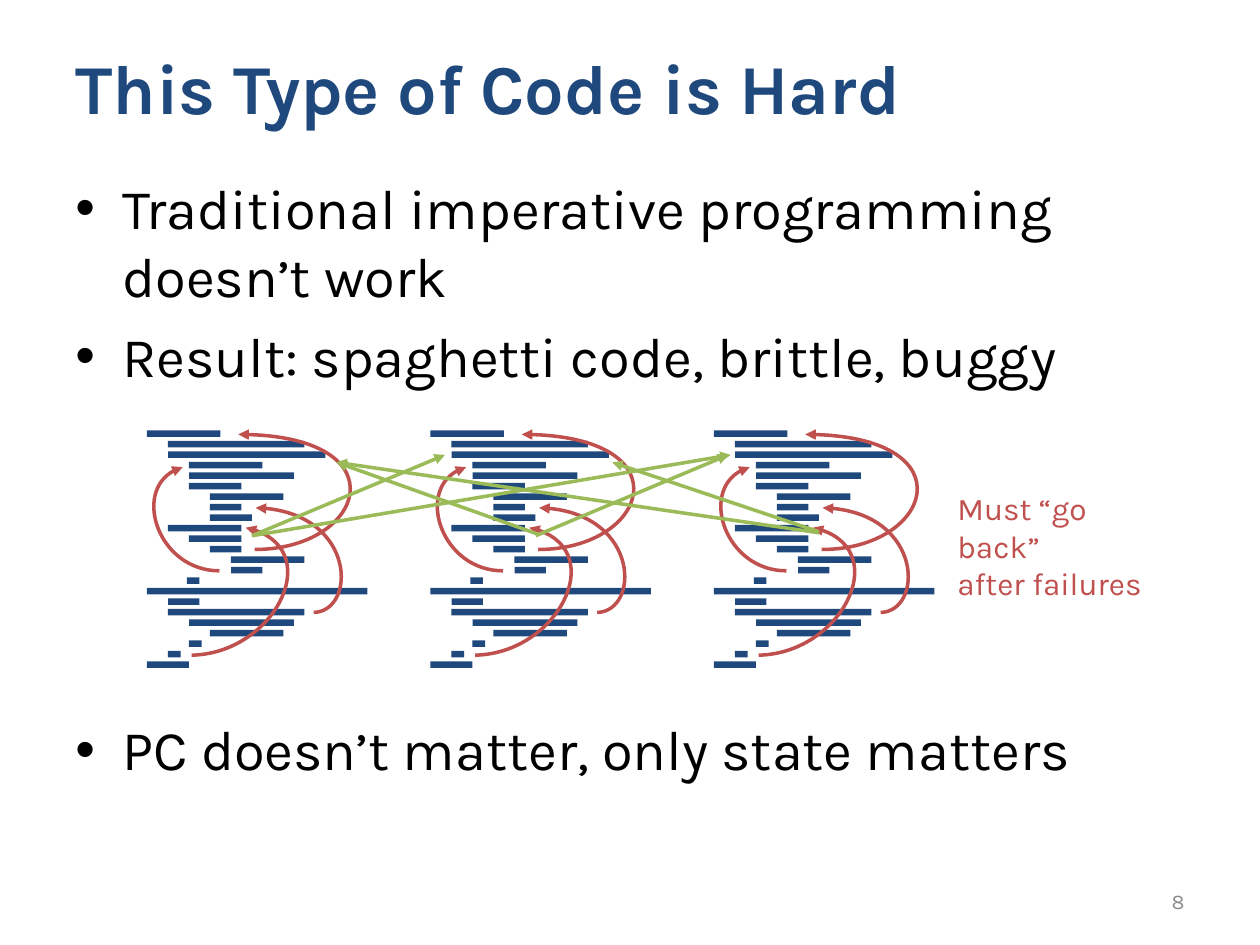
from dataclasses import dataclass

from lxml import etree
from pptx import Presentation
from pptx.dml.color import RGBColor
from pptx.enum import shapes, text
from pptx.oxml import ns
from pptx.util import Cm, Pt


@dataclass(frozen=True)
class Theme:
    font: str = "Karla"
    navy: str = "1F497D"
    red: str = "C0504D"
    green: str = "9BBB59"
    black: str = "000000"
    grey: str = "8C8C8C"
    title: int = 40
    body: int = 32
    callout: int = 18
    number: int = 12
    stroke: int = 2


theme = Theme()


def add_text(wording, *, at, size, colour, bold=False, bullet=False, before=(),
             align=text.PP_ALIGN.LEFT, anchor=text.MSO_ANCHOR.TOP):
    """Add a text box with one paragraph per line of wording."""
    box = page.shapes.add_textbox(*map(Cm, at))
    frame = box.text_frame
    frame.word_wrap = True
    frame.vertical_anchor = anchor
    for i, line in enumerate(wording.split("\n")):
        para = frame.paragraphs[0] if i == 0 else frame.add_paragraph()
        para.alignment = align
        if before:
            para.space_before = Pt(before[i])
        span = para.add_run()
        span.text = line
        span.font.name = theme.font
        span.font.size = Pt(size)
        span.font.bold = bold
        span.font.color.rgb = RGBColor.from_string(colour)
        if bullet:
            props = para._p.get_or_add_pPr()
            props.set("marL", str(Cm(0.95)))
            props.set("indent", str(-Cm(0.95)))
            etree.SubElement(props, ns.qn("a:buFont")).set("typeface", "Arial")
            etree.SubElement(props, ns.qn("a:buChar")).set("char", "•")


def style_arrow(arrow, colour):
    """Give a line its colour, width and arrowhead, and no shadow."""
    arrow.line.color.rgb = RGBColor.from_string(colour)
    arrow.line.width = Pt(theme.stroke)
    props = arrow._element.spPr
    head = etree.SubElement(props.find(ns.qn("a:ln")), ns.qn("a:tailEnd"))
    head.set("type", "triangle")
    etree.SubElement(props, ns.qn("a:effectLst"))


deck = Presentation()
deck.slide_width, deck.slide_height = Cm(25.4), Cm(19.05)
page = deck.slides.add_slide(deck.slide_layouts[6])

# Bullets, page number and title
add_text("Traditional imperative programming doesn’t work\n"
         "Result: spaghetti code, brittle, buggy\n"
         "PC doesn’t matter, only state matters",
         at=(1.27, 3.38, 23.29, 14.4), size=theme.body, colour=theme.black,
         bullet=True, before=(7.5, 7.5, 186.5))
add_text("8", at=(18.21, 17.65, 5.92, 1.02), size=theme.number, colour=theme.grey,
         align=text.PP_ALIGN.RIGHT, anchor=text.MSO_ANCHOR.MIDDLE)
add_text("This Type of Code is Hard", at=(1.27, 0.76, 22.86, 1.98),
         size=theme.title, colour=theme.navy, bold=True,
         anchor=text.MSO_ANCHOR.MIDDLE)

# Code listings sit on a grid of twelfths of an inch
STEP = 2.54 / 12
LISTING_TOP = 41 * STEP
LISTING_LEFT = 14 * STEP
LISTING_PITCH = 27 * STEP
BAR_HEIGHT = 0.13

# Indent and length of each code line, in steps
code_lines = [
    (0, 7), (2, 13), (2, 15), (4, 7), (4, 10), (4, 5), (6, 7), (6, 3),
    (6, 4), (2, 7), (4, 5), (6, 3), (8, 7), (8, 3), (3.8, 1.2), (0, 21),
    (2, 3), (2, 13), (4, 10), (6, 7), (4, 1.2), (2, 1.2), (0, 4),
]
# Bezier points of each backward jump, in cm from the listing's corner
jumps = [
    [(3.36, 3.67), (4.22, 3.64), (4.22, 1.61), (2.19, 1.56)],
    [(1.46, 2.83), (0.24, 2.83), (-0.37, 1.05), (0.72, 0.74)],
    [(2.17, 2.4), (4.38, 2.4), (5.16, 0.08), (1.84, 0.08)],
    [(0.9, 4.53), (2.55, 4.5), (3.67, 2.32), (1.99, 1.96)],
]

for column in (2, 1, 0):
    left = LISTING_LEFT + column * LISTING_PITCH
    listing = page.shapes.add_group_shape()
    for row, (indent, length) in enumerate(code_lines):
        bar = listing.shapes.add_shape(
            shapes.MSO_SHAPE.RECTANGLE, Cm(left + indent * STEP),
            Cm(LISTING_TOP + row * STEP), Cm(length * STEP), Cm(BAR_HEIGHT))
        bar.shadow.inherit = False
        bar.fill.solid()
        bar.fill.fore_color.rgb = RGBColor.from_string(theme.navy)
        bar.line.fill.background()

    for jump in jumps:
        controls = [(Cm(left + x), Cm(LISTING_TOP + y)) for x, y in jump]
        # Points along the curve give the outline its extent
        trace = []
        for t in (i / 24 for i in range(25)):
            weights = ((1 - t) ** 3, 3 * t * (1 - t) ** 2, 3 * t * t * (1 - t), t ** 3)
            trace.append(tuple(round(sum(w * p[axis] for w, p in zip(weights, controls)))
                               for axis in (0, 1)))
        builder = listing.shapes.build_freeform(*trace[0])
        builder.add_line_segments(trace[1:], close=False)
        curve = builder.convert_to_shape()
        curve.fill.background()
        style_arrow(curve, theme.red)

        # One cubic segment takes the place of the straight ones
        outline = next(curve._element.iter(ns.qn("a:path")))
        for segment in list(outline)[1:]:
            outline.remove(segment)
        cubic = etree.SubElement(outline, ns.qn("a:cubicBezTo"))
        for x, y in controls[1:]:
            point = etree.SubElement(cubic, ns.qn("a:pt"))
            point.set("x", str(x - curve.left))
            point.set("y", str(y - curve.top))

# Arrows between listings
links = [
    (5.08, 10.8, 8.97, 9.17),
    (5.08, 10.8, 14.73, 9.17),
    (10.8, 10.8, 14.68, 9.17),
    (10.85, 10.77, 6.78, 9.32),
    (16.51, 10.74, 6.78, 9.32),
    (16.51, 10.72, 12.34, 9.32),
]
for ends in links:
    link = page.shapes.add_connector(shapes.MSO_CONNECTOR.STRAIGHT, *map(Cm, ends))
    style_arrow(link, theme.green)

# Callout
add_text("Must “go back”\nafter failures", at=(19.05, 9.73, 4.75, 1.8),
         size=theme.callout, colour=theme.red)

deck.save("out.pptx")
